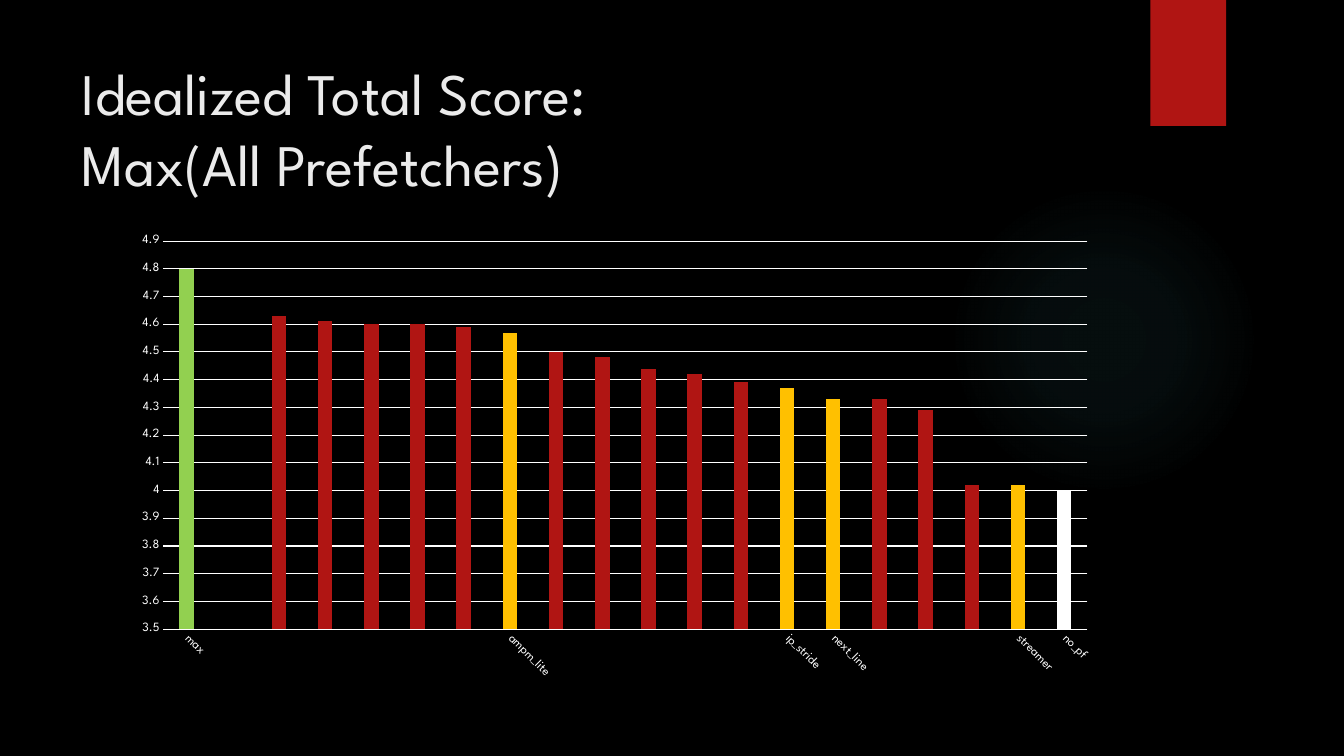
from dataclasses import dataclass

import pptx
import pptx.chart.data
import pptx.dml.color
import pptx.enum.chart
import pptx.enum.shapes
import pptx.enum.text
import pptx.oxml
import pptx.oxml.ns
import pptx.util

RGB = pptx.dml.color.RGBColor
BLACK = RGB(0x00, 0x00, 0x00)
WHITE = RGB(0xFF, 0xFF, 0xFF)
OFF_WHITE = RGB(0xEB, 0xEB, 0xEB)
RED = RGB(0xB0, 0x15, 0x13)
GREEN = RGB(0x92, 0xD0, 0x50)
AMBER = RGB(0xFF, 0xC0, 0x00)
TEAL = RGB(0x50, 0xB9, 0xC1)
FONT = "League Spartan"
WIDTH, HEIGHT = pptx.util.Inches(13.33), pptx.util.Inches(7.5)
SHAPES = pptx.enum.shapes.MSO_SHAPE


@dataclass
class Area:
    """A rectangle in percent of the slide's width and height."""
    left: float
    top: float
    width: float
    height: float

    def emu(self) -> tuple[int, int, int, int]:
        return (int(WIDTH * self.left / 100), int(HEIGHT * self.top / 100),
                int(WIDTH * self.width / 100), int(HEIGHT * self.height / 100))


@dataclass
class Bar:
    score: float | None
    label: str = ""
    color: RGB = RED


@dataclass
class GlowStop:
    position: int
    opacity: int


GLOW = Area(70.59, 24.4, 23.1, 41.07)
RIBBON = Area(85.6, 0, 5.63, 16.67)
TITLE = Area(5.33, 6.67, 77.19, 20.4)
CHART = Area(9.08, 29.87, 73.37, 61.2)
PLOT_SHARES = {"x": 0.042, "y": 0.033, "w": 0.937, "h": 0.839}
GLOW_STOPS = [GlowStop(0, 7), GlowStop(36, 6), GlowStop(69, 0)]
TITLE_LINES = ["Idealized Total Score:", "Max(All Prefetchers)"]
BARS = [
    Bar(4.8, "max", GREEN), Bar(None),
    *map(Bar, (4.63, 4.61, 4.6, 4.6, 4.59)),
    Bar(4.57, "ampm_lite", AMBER),
    *map(Bar, (4.5, 4.48, 4.44, 4.42, 4.39)),
    Bar(4.37, "ip_stride", AMBER), Bar(4.33, "next_line", AMBER),
    *map(Bar, (4.33, 4.29, 4.02)),
    Bar(4.02, "streamer", AMBER), Bar(4, "no_pf", WHITE),
]


def set_all(target: object, values: dict) -> None:
    for name, value in values.items():
        setattr(target, name, value)


def style_font(font, size: float, color: RGB) -> None:
    set_all(font, {"name": FONT, "size": pptx.util.Pt(size), "bold": False})
    font.color.rgb = color


def style_line(line) -> None:
    line.color.rgb = WHITE
    line.width = pptx.util.Pt(0.75)


def add_plain_shape(s, kind: SHAPES, area: Area, color: RGB):
    sp = s.shapes.add_shape(kind, *area.emu())
    sp.shadow.inherit = False
    sp.fill.solid()
    sp.fill.fore_color.rgb = color
    sp.line.fill.background()
    return sp


def add_glow(s) -> None:
    """Draw a faint round light that fades out from its centre."""
    sp = add_plain_shape(s, SHAPES.OVAL, GLOW, TEAL)
    stops = "".join(
        f'<a:gs pos="{g.position * 1000}"><a:srgbClr val="{TEAL}">'
        f'<a:alpha val="{g.opacity * 1000}"/></a:srgbClr></a:gs>'
        for g in GLOW_STOPS)
    gradient = pptx.oxml.parse_xml(
        f'<a:gradFill {pptx.oxml.ns.nsdecls("a")} rotWithShape="1">'
        f'<a:gsLst>{stops}</a:gsLst><a:path path="circle">'
        '<a:fillToRect l="50000" t="50000" r="50000" b="50000"/>'
        '</a:path></a:gradFill>')
    solid = sp._element.spPr.find(pptx.oxml.ns.qn("a:solidFill"))
    solid.getparent().replace(solid, gradient)


def add_title(s) -> None:
    tf = s.shapes.add_textbox(*TITLE.emu()).text_frame
    set_all(tf, {"word_wrap": True,
                 "vertical_anchor": pptx.enum.text.MSO_ANCHOR.MIDDLE})
    p = tf.paragraphs[0]
    for i, line in enumerate(TITLE_LINES):
        if i:
            p.add_line_break()
        r = p.add_run()
        r.text = line
        style_font(r.font, 42, OFF_WHITE)


def style_axes(chart) -> None:
    tick = pptx.enum.chart.XL_TICK_MARK.NONE
    for axis in (chart.category_axis, chart.value_axis):
        set_all(axis, {"major_tick_mark": tick, "minor_tick_mark": tick})
        style_font(axis.tick_labels.font, 9, WHITE)
    categories, scores = chart.category_axis, chart.value_axis
    style_line(categories.format.line)
    body = categories._element.find(".//" + pptx.oxml.ns.qn("a:bodyPr"))
    body.set("rot", str(45 * 60000))
    body.set("vert", "horz")
    set_all(scores, {"minimum_scale": 3.5, "maximum_scale": 4.9,
                     "major_unit": 0.1, "has_major_gridlines": True})
    scores.format.line.fill.background()
    style_line(scores.major_gridlines.format.line)


def place_plot(chart) -> None:
    """Fix the inner plot area as shares of the chart frame."""
    qn = pptx.oxml.ns.qn
    plot_area = chart._chartSpace.chart.plotArea
    for old in plot_area.findall(qn("c:layout")):
        plot_area.remove(old)
    shares = "".join(f'<c:{k} val="{v}"/>' for k, v in PLOT_SHARES.items())
    plot_area.insert(0, pptx.oxml.parse_xml(
        f'<c:layout {pptx.oxml.ns.nsdecls("c")}><c:manualLayout>'
        '<c:layoutTarget val="inner"/><c:xMode val="edge"/>'
        f'<c:yMode val="edge"/>{shares}</c:manualLayout></c:layout>'))


def add_score_chart(s) -> None:
    data = pptx.chart.data.CategoryChartData()
    data.categories = [bar.label for bar in BARS]
    data.add_series("Series 1", [bar.score for bar in BARS])
    chart = s.shapes.add_chart(
        pptx.enum.chart.XL_CHART_TYPE.COLUMN_CLUSTERED, *CHART.emu(), data).chart
    set_all(chart, {"has_legend": False, "has_title": False})
    style_font(chart.font, 10, WHITE)
    plot = chart.plots[0]
    set_all(plot, {"gap_width": 219, "overlap": -27, "vary_by_categories": False})
    series = plot.series[0]
    series.invert_if_negative = False
    series.format.fill.solid()
    series.format.fill.fore_color.rgb = RED
    for i, bar in enumerate(BARS):
        if bar.color != RED:
            fill = series.points[i].format.fill
            fill.solid()
            fill.fore_color.rgb = bar.color
    style_axes(chart)
    place_plot(chart)


def main() -> None:
    prs = pptx.Presentation()
    set_all(prs, {"slide_width": WIDTH, "slide_height": HEIGHT})
    s = prs.slides.add_slide(prs.slide_layouts[6])
    s.background.fill.solid()
    s.background.fill.fore_color.rgb = BLACK
    add_glow(s)
    add_plain_shape(s, SHAPES.RECTANGLE, RIBBON, RED)
    add_title(s)
    add_score_chart(s)
    prs.save("out.pptx")


if __name__ == "__main__":
    main()
